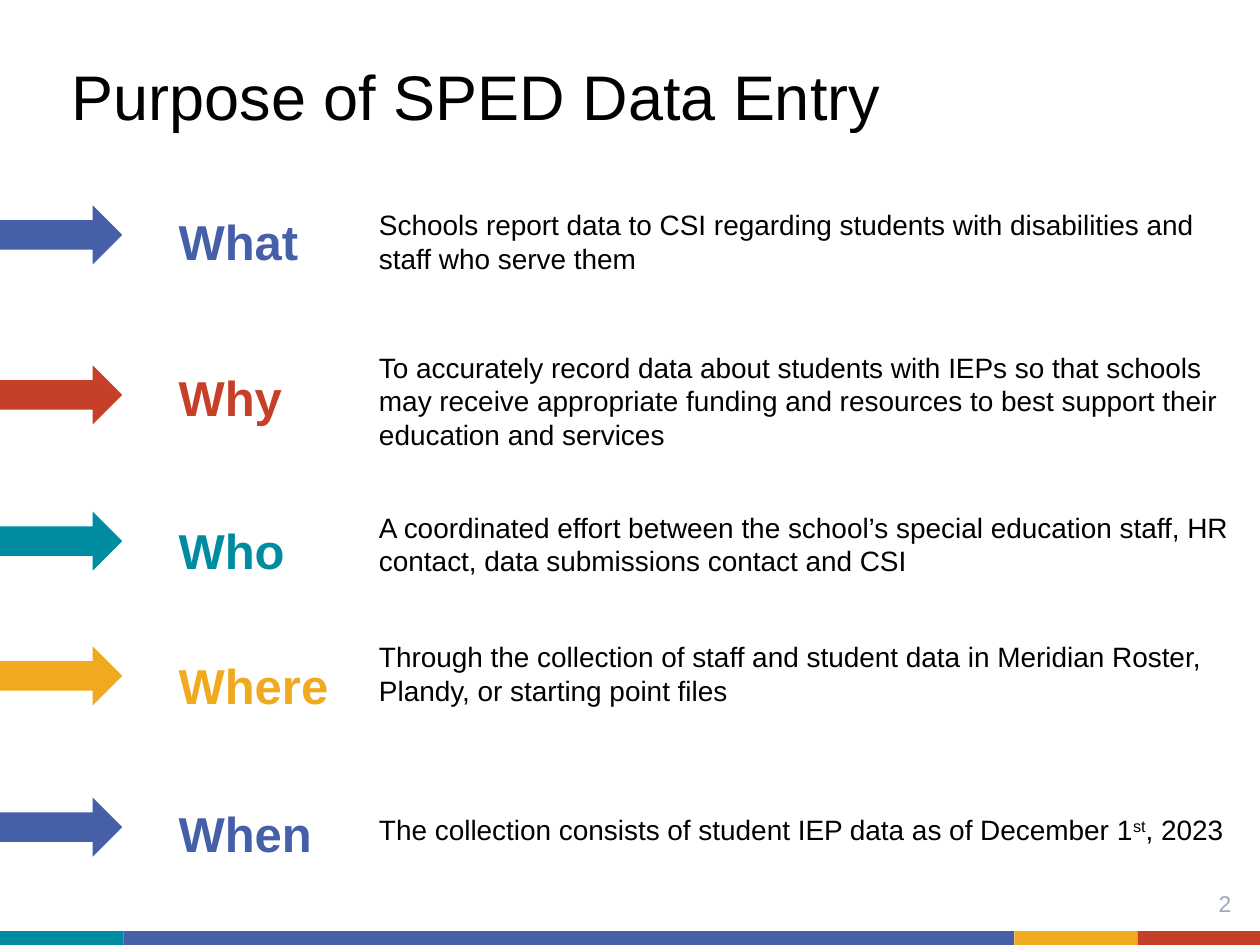
from pptx import Presentation
from pptx.dml.color import RGBColor
from pptx.enum.shapes import MSO_SHAPE as Shape
from pptx.enum.text import MSO_ANCHOR as Anchor, MSO_AUTO_SIZE as AutoSize, PP_ALIGN as Align
from pptx.util import Inches, Pt

BLUE, RED, TEAL, GOLD = "455FA9", "C63F28", "008CA0", "EFAA1F"
BLACK, GRAY = "000000", "97ABBC"


def color(value):
    return RGBColor.from_string(value)


class SlideBuilder:
    font_name = "Arial"

    def __init__(self, slide):
        self.slide = slide

    def block(self, kind, left, top, width, height, fill):
        shape = self.slide.shapes.add_shape(
            kind, Inches(left), Inches(top), Inches(width), Inches(height))
        shape.shadow.inherit = False
        shape.fill.solid()
        shape.fill.fore_color.rgb = color(fill)
        shape.line.fill.background()

    def format_runs(self, paragraph, size, text_color, bold=False):
        for run in paragraph.runs:
            run.font.name = self.font_name
            run.font.size = Pt(size)
            run.font.bold = bold
            run.font.color.rgb = color(text_color)

    def set_insets(self, text_frame, inset):
        text_frame.margin_left = text_frame.margin_right = Inches(inset)
        text_frame.margin_top = text_frame.margin_bottom = Inches(inset)

    def title(self, text, left, top, width, height):
        shape = self.slide.shapes.title
        shape.left, shape.top = Inches(left), Inches(top)
        shape.width, shape.height = Inches(width), Inches(height)
        text_frame = shape.text_frame
        text_frame.text = text
        text_frame.auto_size = AutoSize.NONE
        text_frame.vertical_anchor = Anchor.BOTTOM
        self.set_insets(text_frame, 0.1)
        paragraph = text_frame.paragraphs[0]
        paragraph.alignment = Align.LEFT
        self.format_runs(paragraph, 36, BLACK)

    def text(self, text, left, top, width, height, size, text_color,
             bold=False, align=Align.LEFT, inset=None):
        box = self.slide.shapes.add_textbox(
            Inches(left), Inches(top), Inches(width), Inches(height))
        text_frame = box.text_frame
        text_frame.word_wrap = True
        if inset is not None:
            self.set_insets(text_frame, inset)
        paragraph = text_frame.paragraphs[0]
        paragraph.alignment = align
        for index, part in enumerate(text.split("^")):
            run = paragraph.add_run()
            run.text = part
            if index % 2:
                run._r.get_or_add_rPr().set("baseline", "30000")
        self.format_runs(paragraph, size, text_color, bold)


def main():
    presentation = Presentation()
    presentation.slide_width, presentation.slide_height = Inches(10), Inches(7.5)
    builder = SlideBuilder(presentation.slides.add_slide(presentation.slide_layouts[5]))

    left = 0
    for width, fill in ((0.98, TEAL), (7.07, BLUE), (0.98, GOLD), (0.97, RED)):
        builder.block(Shape.RECTANGLE, left, 7.39, width, 0.11, fill)
        left += width

    builder.title("Purpose of SPED Data Entry", 0.47, 0.41, 8.95, 0.75)

    rows = (
        ("What", BLUE, 1.63, 1.63, 1.6, 0.64,
         "Schools report data to CSI regarding students with disabilities and "
         "staff who serve them"),
        ("Why", RED, 2.9, 2.87, 2.73, 0.91,
         "To accurately record data about students with IEPs so that schools may receive "
         "appropriate funding and resources to best support their education and services"),
        ("Who", TEAL, 4.06, 4.08, 4, 0.91,
         "A coordinated effort between the school’s special education staff, HR contact, "
         "data submissions contact and CSI"),
        ("Where", GOLD, 5.13, 5.15, 5.03, 0.64,
         "Through the collection of staff and student data in Meridian Roster, Plandy, "
         "or starting point files"),
        ("When", BLUE, 6.33, 6.33, 6.4, 0.37,
         "The collection consists of student IEP data as of December 1^st^, 2023"),
    )
    for question, accent, arrow_top, question_top, answer_top, answer_height, answer in rows:
        builder.block(Shape.RIGHT_ARROW, -0.01, arrow_top, 0.98, 0.47, accent)
        builder.text(question, 1.32, question_top, 1.74, 0.57, 28, accent, bold=True)
        builder.text(answer, 2.91, answer_top, 7, answer_height, 16, BLACK)

    builder.text("2", 9.27, 6.96, 0.6, 0.46, 13, GRAY, align=Align.RIGHT, inset=0.1)
    presentation.save("out.pptx")


if __name__ == "__main__":
    main()
